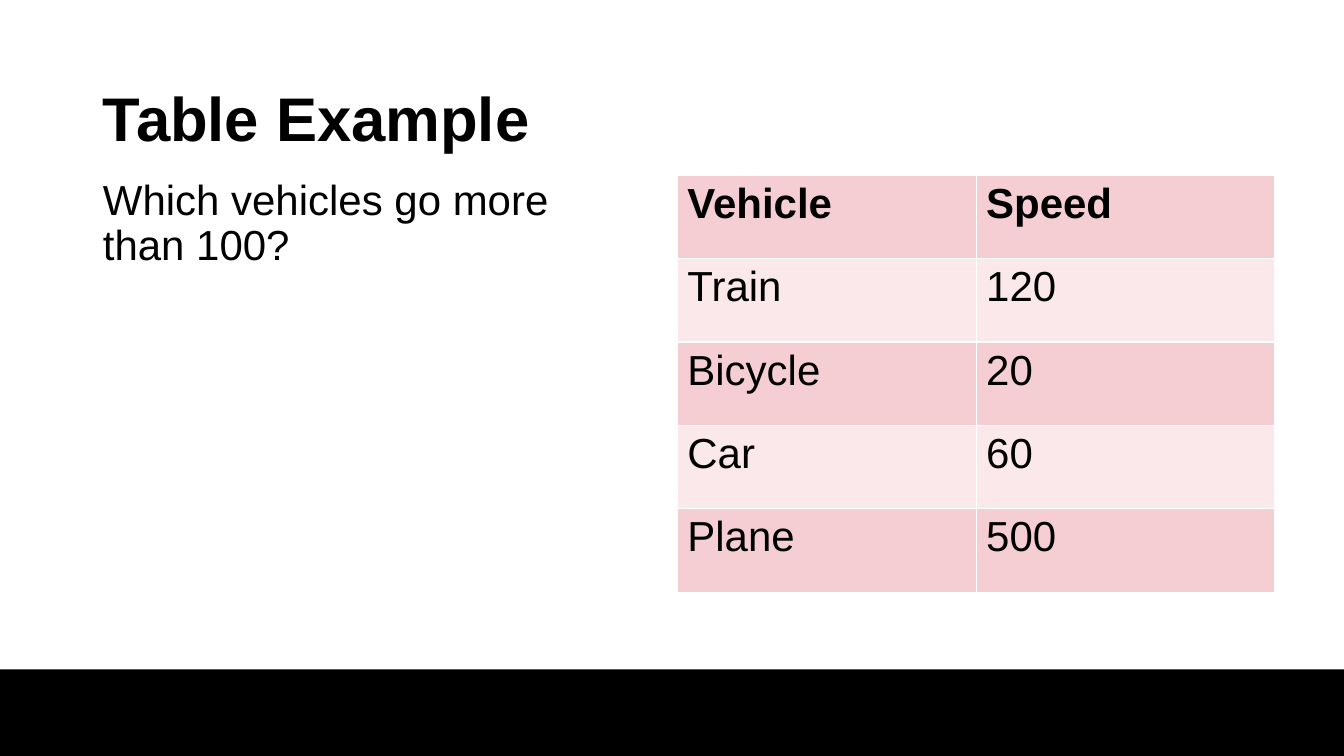
from lxml.etree import SubElement
from pptx import Presentation
from pptx.dml.color import RGBColor
from pptx.enum.shapes import MSO_SHAPE
from pptx.enum.text import MSO_ANCHOR, MSO_AUTO_SIZE, PP_ALIGN
from pptx.oxml.ns import qn
from pptx.util import Cm, Pt

BLACK = "000000"
WHITE = "FFFFFF"
ROW_FILLS = ["F4CED2", "FAE8EA"]
ROWS = [
    ["Vehicle", "Speed"],
    ["Train", "120"],
    ["Bicycle", "20"],
    ["Car", "60"],
    ["Plane", "500"],
]


def paint(fill, color):
    fill.solid()
    fill.fore_color.rgb = RGBColor.from_string(color)


def format_text(paragraph, size, bold=False):
    for span in paragraph.runs:
        span.font.name = "Arial"
        span.font.size = Pt(size)
        span.font.bold = bold
        paint(span.font.fill, BLACK)


def fill_placeholder(box, text, left, top, width, height, size, anchor, bold=False):
    box.left, box.top, box.width, box.height = Cm(left), Cm(top), Cm(width), Cm(height)
    frame = box.text_frame
    frame.text = text
    frame.word_wrap = True
    frame.auto_size = MSO_AUTO_SIZE.NONE
    frame.vertical_anchor = anchor
    paragraph = frame.paragraphs[0]
    paragraph.alignment = PP_ALIGN.LEFT
    paragraph.line_spacing = 0.9
    paragraph.space_before = Pt(0)
    properties = paragraph._p.get_or_add_pPr()
    properties.set("marL", "0")
    properties.set("indent", "0")
    SubElement(properties, qn("a:buNone"))
    format_text(paragraph, size, bold)


def add_band(page, left, top, width, height, color):
    band = page.shapes.add_shape(
        MSO_SHAPE.RECTANGLE, Cm(left), Cm(top), Cm(width), Cm(height))
    band.shadow.inherit = False
    paint(band.fill, color)
    band.line.fill.background()


def add_borders(cell, color):
    properties = cell._tc.get_or_add_tcPr()
    for side in ("lnL", "lnR", "lnT", "lnB"):
        line = SubElement(properties, qn(f"a:{side}"), w=str(Pt(1)))
        solid = SubElement(line, qn("a:solidFill"))
        SubElement(solid, qn("a:srgbClr"), val=color)


def add_speed_table(page, left, top, column_width, row_height):
    columns = len(ROWS[0])
    table = page.shapes.add_table(
        len(ROWS), columns, Cm(left), Cm(top),
        Cm(column_width * columns), Cm(row_height * len(ROWS))).table
    for column in table.columns:
        column.width = Cm(column_width)
    for row_index, values in enumerate(ROWS):
        table.rows[row_index].height = Cm(row_height)
        for column_index, value in enumerate(values):
            cell = table.cell(row_index, column_index)
            cell.text_frame.text = value
            format_text(cell.text_frame.paragraphs[0], 30, bold=row_index == 0)
            add_borders(cell, WHITE)
            paint(cell.fill, ROW_FILLS[row_index % 2])


def main():
    deck = Presentation()
    deck.slide_width, deck.slide_height = Cm(33.87), Cm(19.05)
    page = deck.slides.add_slide(deck.slide_layouts[1])
    paint(page.background.fill, WHITE)
    add_band(page, 0, 16.87, 33.87, 2.18, BLACK)
    fill_placeholder(page.shapes.title, "Table Example",
                     2.34, 2.01, 29.21, 2.13, 44, MSO_ANCHOR.MIDDLE, bold=True)
    fill_placeholder(page.placeholders[1], "Which vehicles go more than 100?",
                     2.34, 4.39, 13.56, 11.46, 30, MSO_ANCHOR.TOP)
    add_speed_table(page, 17.07, 4.42, 7.53, 2.1)
    deck.save("out.pptx")


if __name__ == "__main__":
    main()
